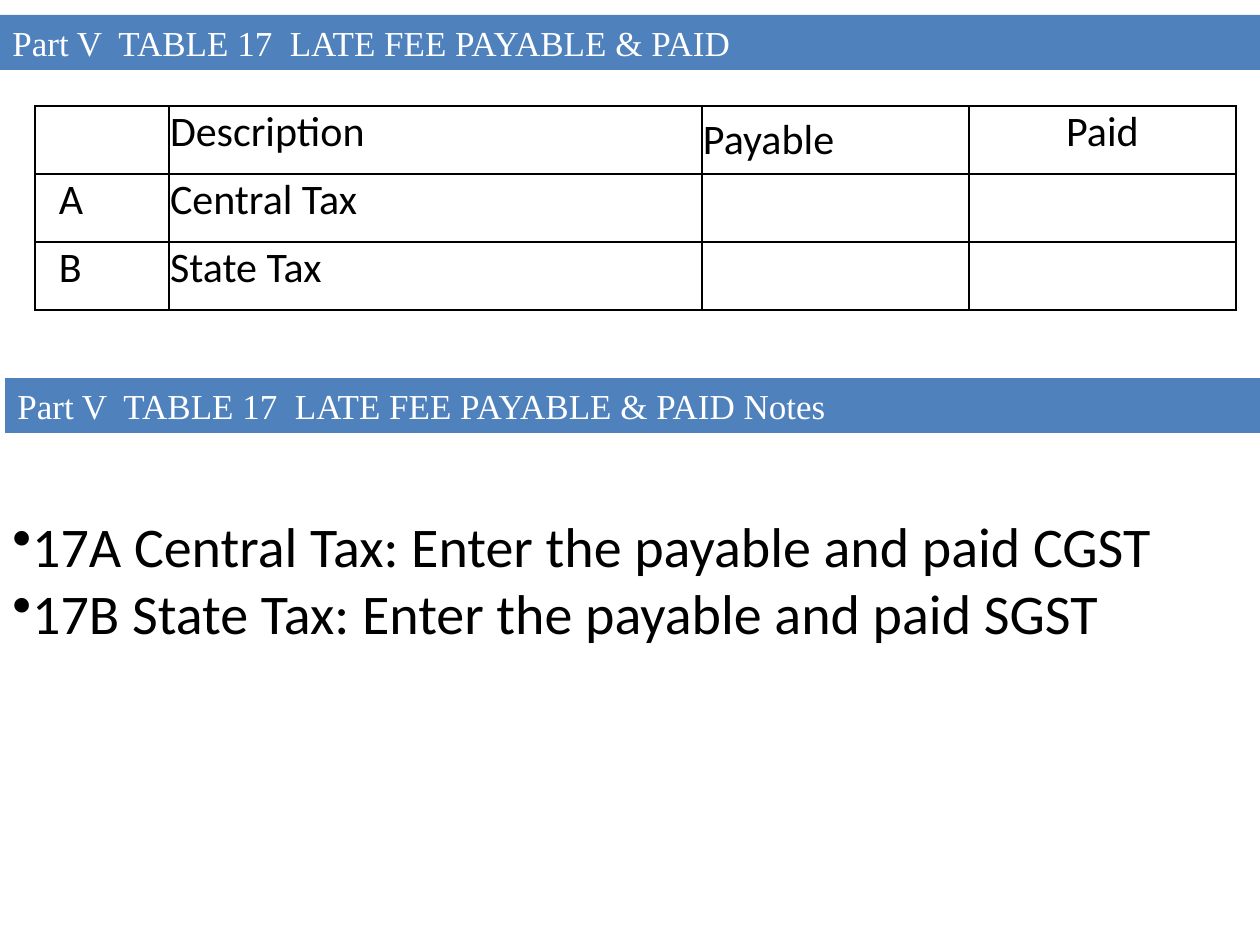
from dataclasses import dataclass

from lxml.etree import SubElement as Sub
from pptx import Presentation
from pptx.dml.color import RGBColor as RGB
from pptx.enum.shapes import MSO_SHAPE as Shape
from pptx.enum.text import MSO_ANCHOR as Anchor, PP_ALIGN as Align
from pptx.oxml.ns import qn
from pptx.util import Pt

SCALE = 914400 / 126


@dataclass(frozen=True)
class Theme:
    blue: str = "4F81BD"
    white: str = "FFFFFF"
    black: str = "000000"
    serif: str = "Times New Roman"
    sans: str = "Calibri"
    title: int = 20
    cell: int = 24
    note: int = 32


THEME = Theme()
TITLE = "Part V  TABLE 17  LATE FEE PAYABLE & PAID"
COLS = (134, 533, 267, 267)
ROWS = (
    ("", "Description", "Payable", "Paid"),
    ("A", "Central Tax", "", ""),
    ("B", "State Tax", "", ""),
)
NOTES = (
    "17A Central Tax: Enter the payable and paid CGST",
    "17B State Tax: Enter the payable and paid SGST",
)


def px(num):
    return round(num * SCALE)


def style(para, face, size, color):
    para.font.name = face
    para.font.size = Pt(size)
    para.font.color.rgb = RGB.from_string(color)


def banner(slide, left, top, text):
    bar = slide.shapes.add_shape(
        Shape.RECTANGLE, px(left), px(top), px(1260 - left), px(55))
    bar.shadow.inherit = False
    bar.fill.solid()
    bar.fill.fore_color.rgb = RGB.from_string(THEME.blue)
    bar.line.fill.background()
    frame = bar.text_frame
    frame.vertical_anchor = Anchor.MIDDLE
    para = frame.paragraphs[0]
    para.text = text
    para.alignment = Align.JUSTIFY
    style(para, THEME.serif, THEME.title, THEME.white)


def border(cell):
    props = cell._tc.get_or_add_tcPr()
    for side in ("lnL", "lnR", "lnT", "lnB"):
        line = Sub(props, qn(f"a:{side}"), w=str(Pt(1)))
        fill = Sub(line, qn("a:solidFill"))
        Sub(fill, qn("a:srgbClr"), val=THEME.black)


def write(cell, text, inset):
    cell.margin_left = px(inset)
    cell.margin_right = cell.margin_top = px(1)
    cell.margin_bottom = 0
    para = cell.text_frame.paragraphs[0]
    para.text = text
    style(para, THEME.sans, THEME.cell, THEME.black)


def grid(slide, left, top, high):
    table = slide.shapes.add_table(
        len(ROWS), len(COLS), px(left), px(top),
        px(sum(COLS)), px(high * len(ROWS))).table
    table.first_row = table.horz_banding = False
    for col, wide in zip(table.columns, COLS):
        col.width = px(wide)
    for r, row in enumerate(ROWS):
        table.rows[r].height = px(high)
        for c, text in enumerate(row):
            cell = table.cell(r, c)
            border(cell)
            cell.fill.background()
            if text:
                write(cell, text, 1 if c else 24)
    table.cell(0, 2).vertical_anchor = Anchor.MIDDLE
    table.cell(0, 3).text_frame.paragraphs[0].alignment = Align.CENTER


def notes(slide, left, top, wide, high):
    box = slide.shapes.add_textbox(px(left), px(top), px(wide), px(high))
    frame = box.text_frame
    frame.word_wrap = True
    for i, text in enumerate(NOTES):
        para = frame.add_paragraph() if i else frame.paragraphs[0]
        para.text = text
        Sub(para._p.get_or_add_pPr(), qn("a:buChar"), char="•")
        style(para, THEME.sans, THEME.note, THEME.black)


def main():
    deck = Presentation()
    deck.slide_width, deck.slide_height = px(1260), px(945)
    slide = deck.slides.add_slide(deck.slide_layouts[6])
    banner(slide, 0, 15, TITLE)
    grid(slide, 35, 106, 68)
    notes(slide, 0, 505, 1260, 187)
    banner(slide, 5, 378, f"{TITLE} Notes")
    deck.save("out.pptx")


if __name__ == "__main__":
    main()
